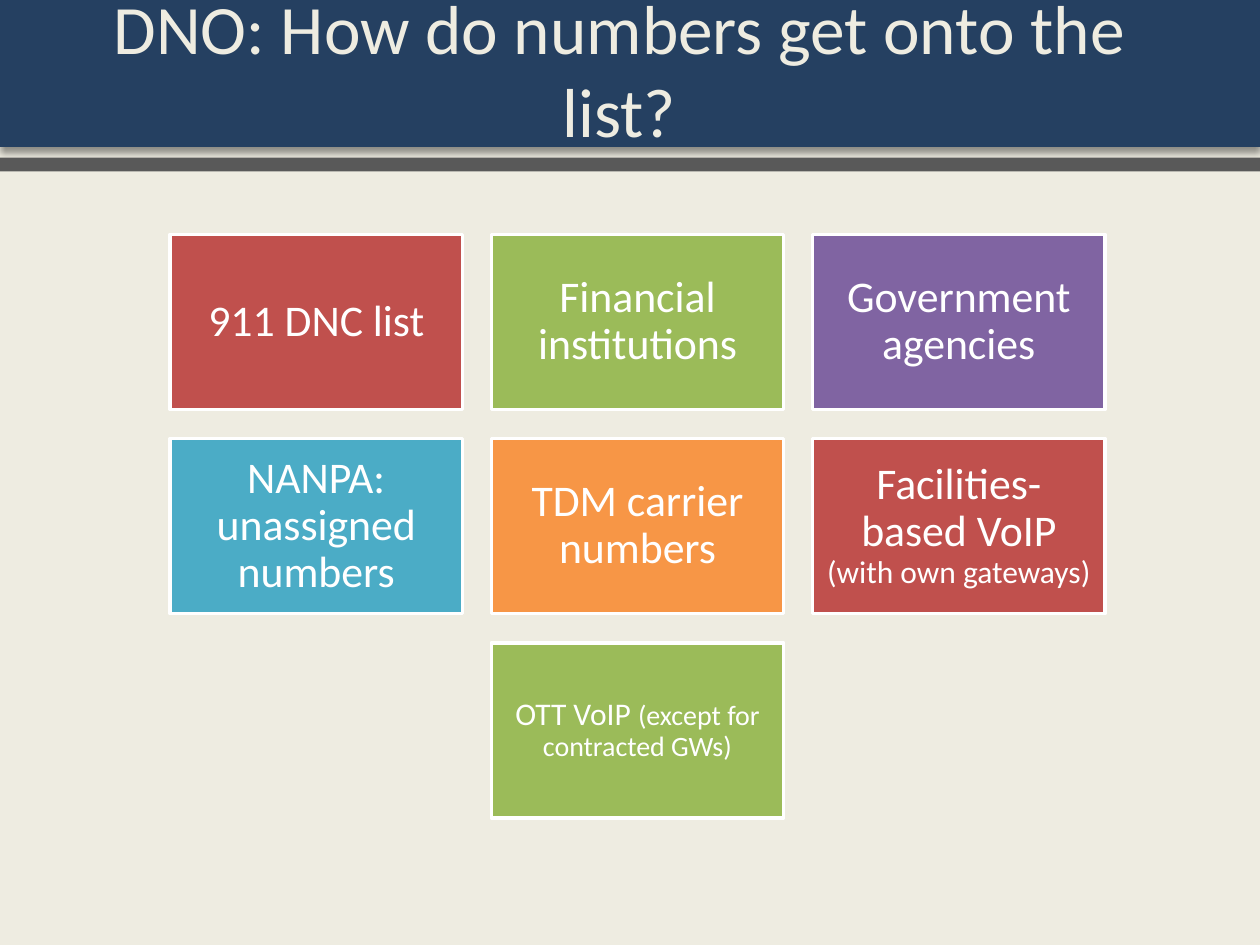
from lxml import etree
from pptx import Presentation
from pptx.dml.color import RGBColor
from pptx.enum import shapes, text
from pptx.oxml import ns
from pptx.util import Pt

HUES = {
    "page": "EEECE1", "navy": "254061", "gray": "595959", "white": "FFFFFF",
    "red": "C0504D", "green": "9BBB59", "purple": "8064A2",
    "teal": "4BACC6", "orange": "F79646", "black": "000000",
}

# Column, row, fill, inset, and (text, size) runs of each tile
TILES = [
    (0, 0, "red", 7.2, [("911 DNC list", 25)]),
    (1, 0, "green", 7.2, [("Financial institutions", 25)]),
    (2, 0, "purple", 7.2, [("Government agencies", 25)]),
    (0, 1, "teal", 7.2, [("NANPA: unassigned numbers", 25)]),
    (1, 1, "orange", 7.2, [("TDM carrier numbers", 25)]),
    (2, 1, "red", 7.2, [("Facilities-based VoIP ", 25),
                        ("(with own gateways)", 18)]),
    (1, 2, "green", 5.04, [("OTT VoIP ", 18),
                           ("(except for contracted GWs)", 16)]),
]
LEFT, TOP = 97.2, 133.9
WIDE, HIGH = 167, 100.1
STEP_X, STEP_Y = 183.6, 116.7


def hue(name):
    return RGBColor.from_string(HUES[name])


def style(run, size, color):
    run.font.name = "Calibri"
    run.font.size = Pt(size)
    run.font.color.rgb = hue(color)


def add_box(slide, x, y, w, h, fill):
    box = slide.shapes.add_shape(
        shapes.MSO_SHAPE.RECTANGLE, Pt(x), Pt(y), Pt(w), Pt(h))
    box.shadow.inherit = False
    box.fill.solid()
    box.fill.fore_color.rgb = hue(fill)
    box.line.fill.background()
    return box


def add_shade(box):
    effects = box.element.spPr.find(ns.qn("a:effectLst"))
    shade = etree.SubElement(effects, ns.qn("a:outerShdw"), blurRad=str(Pt(4)),
                             dist=str(Pt(3)), dir="5400000", rotWithShape="0")
    color = etree.SubElement(shade, ns.qn("a:srgbClr"), val=HUES["black"])
    etree.SubElement(color, ns.qn("a:alpha"), val="40000")


def add_title(slide, words):
    title = slide.shapes.title
    # Bring the title in front of its band
    title.element.getparent().append(title.element)
    title.left, title.top = Pt(30), Pt(-6)
    title.width, title.height = Pt(648), Pt(90)
    frame = title.text_frame
    frame.text = words
    frame.word_wrap = True
    frame.auto_size = text.MSO_AUTO_SIZE.NONE
    frame.vertical_anchor = text.MSO_ANCHOR.MIDDLE
    line = frame.paragraphs[0]
    line.alignment = text.PP_ALIGN.CENTER
    style(line.runs[0], 39.6, "page")


def add_tile(slide, col, row, fill, inset, parts):
    tile = add_box(slide, LEFT + col * STEP_X, TOP + row * STEP_Y,
                   WIDE, HIGH, fill)
    tile.line.color.rgb = hue("white")
    tile.line.width = Pt(2)
    frame = tile.text_frame
    frame.word_wrap = True
    frame.vertical_anchor = text.MSO_ANCHOR.MIDDLE
    frame.margin_left = frame.margin_right = Pt(inset)
    frame.margin_top = frame.margin_bottom = Pt(inset)
    line = frame.paragraphs[0]
    line.alignment = text.PP_ALIGN.CENTER
    line.line_spacing = 0.9
    for words, size in parts:
        run = line.add_run()
        run.text = words
        style(run, size, "white")


def main():
    deck = Presentation()
    deck.slide_width, deck.slide_height = Pt(720), Pt(540)
    slide = deck.slides.add_slide(deck.slide_layouts[5])
    slide.background.fill.solid()
    slide.background.fill.fore_color.rgb = hue("page")

    # Header band, rule and title
    add_shade(add_box(slide, 0, -6, 720, 90, "navy"))
    add_box(slide, 0, 90, 720, 7.92, "gray")
    add_title(slide, "DNO: How do numbers get onto the list?")

    # Grid of sources
    for tile in TILES:
        add_tile(slide, *tile)

    deck.save("out.pptx")


if __name__ == "__main__":
    main()
